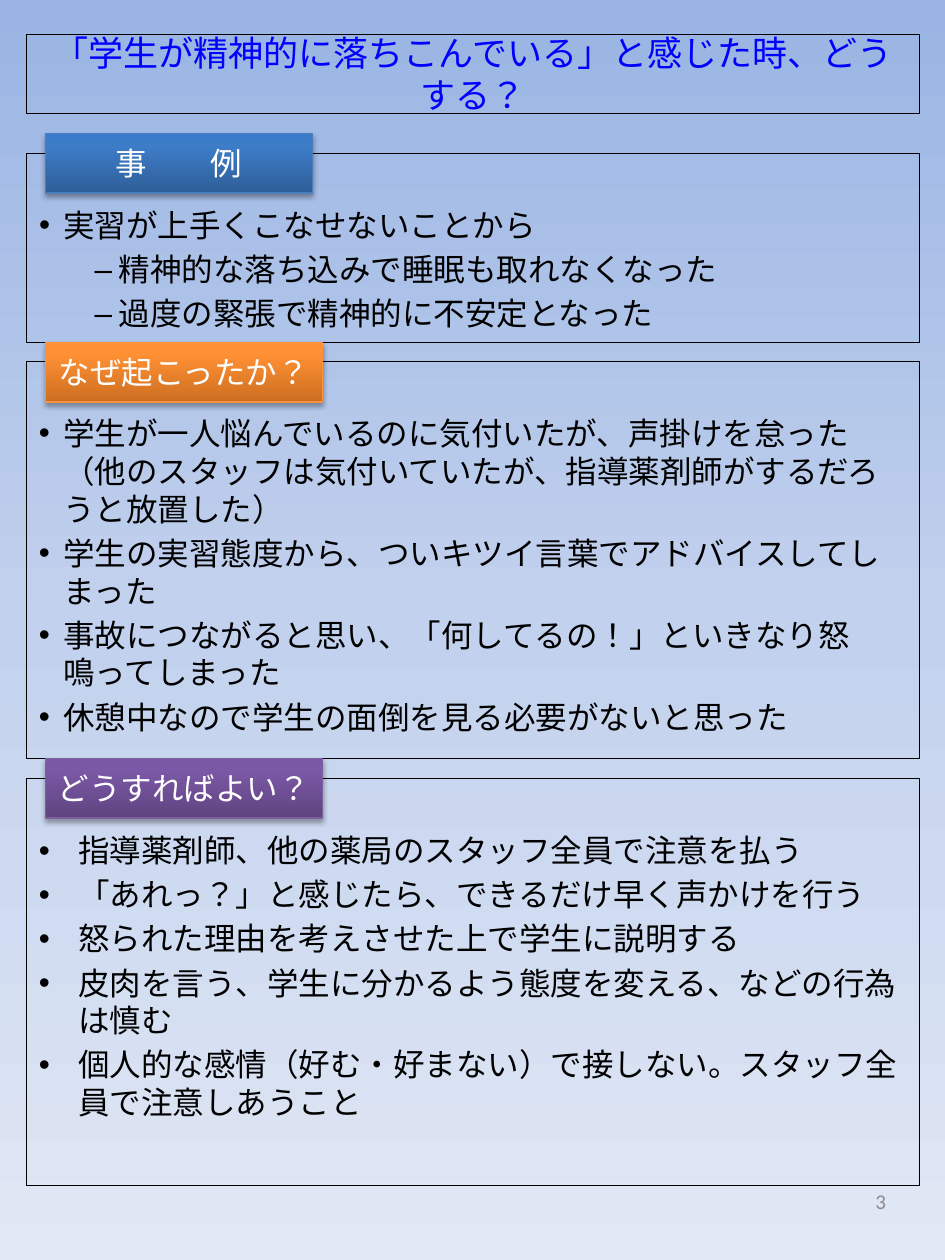
from lxml.etree import SubElement as Sub
from pptx import Presentation
from pptx.dml.color import RGBColor as RGB
from pptx.enum.lang import MSO_LANGUAGE_ID as Lang
from pptx.enum.shapes import MSO_SHAPE as Kind
from pptx.enum.text import MSO_ANCHOR as Anchor, MSO_AUTO_SIZE as Auto, PP_ALIGN as Align
from pptx.oxml.ns import qn
from pptx.util import Pt

BLACK = RGB(0x00, 0x00, 0x00)
WHITE = RGB(0xFF, 0xFF, 0xFF)
BLUE = RGB(0x00, 0x00, 0xFF)
GRAY = RGB(0x8C, 0x8C, 0x8C)
SKY = [(0, RGB(0x9A, 0xB5, 0xE4)), (50, RGB(0xC2, 0xD1, 0xED)), (100, RGB(0xE1, 0xE8, 0xF5))]

# Tab gradients run from the bottom up; the last colour is the edge
CASE = RGB(0x2F, 0x5F, 0x99), RGB(0x3D, 0x7C, 0xC7), RGB(0x3A, 0x7C, 0xCB), RGB(0x4B, 0x7E, 0xBC)
CAUSE = RGB(0xCC, 0x6E, 0x20), RGB(0xFF, 0x90, 0x34), RGB(0xFF, 0x91, 0x36), RGB(0xF6, 0x92, 0x40)
CURE = RGB(0x5F, 0x44, 0x80), RGB(0x7B, 0x58, 0xA6), RGB(0x7C, 0x57, 0xA8), RGB(0x7D, 0x60, 0xA0)

LEFT, WIDE = 15.1, 510.5


class Page:
    font = "Noto Sans CJK JP"
    size = 18

    def __init__(self, slide):
        self.slide = slide
        self.shapes = slide.shapes

    def shade(self, fill, node, stops, angle):
        fill.gradient()
        fill.gradient_angle = angle
        group = node.xpath(".//a:gsLst")[0]
        group.clear()
        for pos, color in stops:
            stop = Sub(group, qn("a:gs"), pos=str(pos * 1000))
            Sub(stop, qn("a:srgbClr"), val=str(color))

    def back(self, stops):
        self.shade(self.slide.background.fill, self.slide._element, stops, 270)

    def place(self, shape, left, top, width, height):
        shape.left, shape.top = Pt(left), Pt(top)
        shape.width, shape.height = Pt(width), Pt(height)

    def edge(self, shape, color):
        shape.line.color.rgb = color
        shape.line.width = Pt(0.75)

    def style(self, para, color, size=None, name=None):
        for run in para.runs:
            font = run.font
            font.size = Pt(size or self.size)
            font.color.rgb = color
            font.language_id = Lang.JAPANESE
            font.name = name or self.font
            Sub(run._r.rPr, qn("a:ea"), typeface=font.name)

    def frame(self, shape, anchor):
        text = shape.text_frame
        text.word_wrap = True
        text.auto_size = Auto.NONE
        text.vertical_anchor = anchor
        return text

    def label(self, shape, words, color, size=None, align=Align.CENTER, name=None):
        text = self.frame(shape, Anchor.MIDDLE)
        text.text = words
        para = text.paragraphs[0]
        para.alignment = align
        self.style(para, color, size, name)
        return para

    def title(self, words, top, height):
        shape = self.shapes.title
        self.place(shape, LEFT, top, WIDE, height)
        self.edge(shape, BLACK)
        self.label(shape, words, BLUE, 20).line_spacing = Pt(24)

    def panel(self, shape, top, height, items, hang):
        """Fill a framed list; each item is (level, words)."""
        self.place(shape, LEFT, top, WIDE, height)
        self.edge(shape, BLACK)
        text = self.frame(shape, Anchor.TOP)
        text.margin_top = Pt(30)
        text.text = "\n".join(words for _, words in items)
        for num, (para, (level, _)) in enumerate(zip(text.paragraphs, items)):
            para.level = level
            para.line_spacing = Pt(21.6)
            para.space_before = Pt(3.6 if num else 0)
            props = para._p.get_or_add_pPr()
            props.set("marL", str(Pt(hang + 31.7 * level)))
            props.set("indent", str(Pt(-hang)))
            Sub(props, qn("a:buFont"), typeface="Arial")
            Sub(props, qn("a:buChar"), char="•–"[level])
            self.style(para, BLACK)

    def box(self):
        return self.shapes.add_textbox(0, 0, 0, 0)

    def tab(self, words, top, width, colors):
        low, mid, high, rim = colors
        shape = self.shapes.add_shape(Kind.RECTANGLE, Pt(25.9), Pt(top), Pt(width), Pt(34))
        self.shade(shape.fill, shape._element, [(0, low), (80, mid), (100, high)], 90)
        self.edge(shape, rim)
        # Soft drop shadow
        shape.shadow.inherit = False
        glow = shape._element.spPr.find(qn("a:effectLst"))
        drop = Sub(glow, qn("a:outerShdw"), blurRad=str(Pt(3.1)), dist=str(Pt(1.8)),
                   dir="5400000", rotWithShape="0")
        tint = Sub(drop, qn("a:srgbClr"), val=str(BLACK))
        Sub(tint, qn("a:alpha"), val="35000")
        self.label(shape, words, WHITE)

    def number(self, words):
        shape = self.box()
        self.place(shape, 387.4, 667.4, 126, 38.2)
        self.label(shape, words, GRAY, 12, Align.RIGHT, "Calibri")


def main():
    deck = Presentation()
    deck.slide_width, deck.slide_height = Pt(540), Pt(720)
    page = Page(deck.slides.add_slide(deck.slide_layouts[1]))
    page.back(SKY)
    page.title("「学生が精神的に落ちこんでいる」と感じた時、どうする？", 19.6, 45.3)

    # Framed lists
    page.panel(page.slide.placeholders[1], 87.8, 108, [
        (0, "実習が上手くこなせないことから"),
        (1, "精神的な落ち込みで睡眠も取れなくなった"),
        (1, "過度の緊張で精神的に不安定となった"),
    ], 13.7)
    page.panel(page.box(), 206.6, 226.8, [
        (0, "学生が一人悩んでいるのに気付いたが、声掛けを怠った（他のスタッフは気付いていたが、指導薬剤師がするだろうと放置した）"),
        (0, "学生の実習態度から、ついキツイ言葉でアドバイスしてしまった"),
        (0, "事故につながると思い、「何してるの！」といきなり怒鳴ってしまった"),
        (0, "休憩中なので学生の面倒を見る必要がないと思った"),
    ], 14)
    page.panel(page.box(), 445, 232.6, [
        (0, "指導薬剤師、他の薬局のスタッフ全員で注意を払う"),
        (0, "「あれっ？」と感じたら、できるだけ早く声かけを行う"),
        (0, "怒られた理由を考えさせた上で学生に説明する"),
        (0, "皮肉を言う、学生に分かるよう態度を変える、などの行為は慎む"),
        (0, "個人的な感情（好む・好まない）で接しない。スタッフ全員で注意しあうこと"),
    ], 22.5)

    # Heading tabs
    page.tab("事　　例", 76.3, 152.6, CASE)
    page.tab("なぜ起こったか？", 195.8, 158.4, CAUSE)
    page.tab("どうすればよい？", 433.4, 158.4, CURE)

    page.number("3")
    deck.save("out.pptx")


if __name__ == "__main__":
    main()
